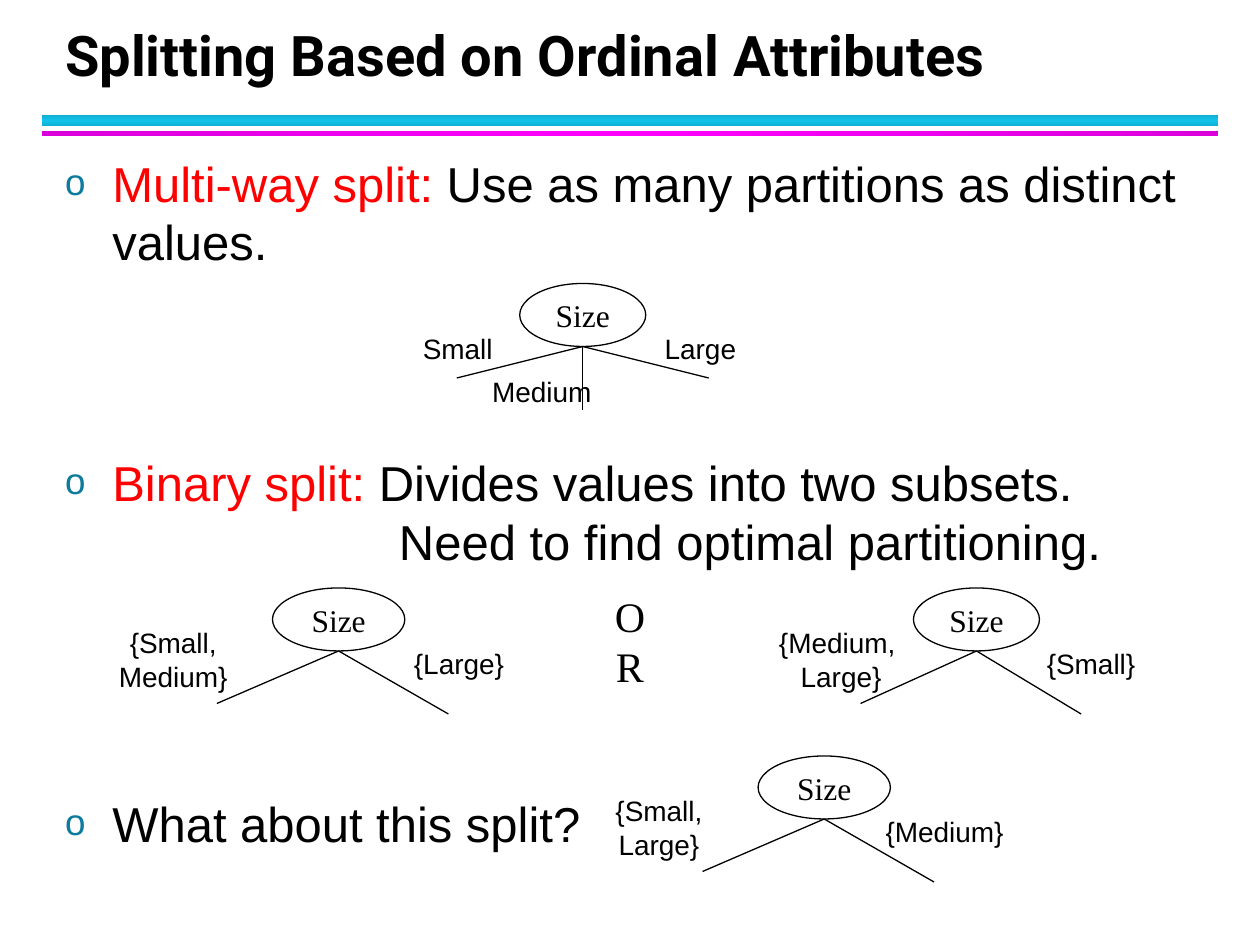
from copy import deepcopy

from pptx import Presentation
from pptx.dml.color import RGBColor
from pptx.enum.shapes import MSO_CONNECTOR, MSO_SHAPE
from pptx.enum.text import MSO_ANCHOR, MSO_AUTO_SIZE, PP_ALIGN
from pptx.oxml.ns import qn
from pptx.util import Inches, Pt
from lxml.etree import SubElement

COLS = 120
BLACK, RED, WHITE = "000000", "FF0000", "FFFFFF"


def rgb(value):
    return RGBColor.from_string(value)


class Deck:
    """Style and current slide; lengths are cells of a grid 120 columns wide."""
    sans, serif, heading = "Arial", "Times New Roman", "Roboto"
    bullet_color = "0C7B9C"

    def __init__(self):
        self.prs = Presentation()
        self.prs.slide_width, self.prs.slide_height = Inches(10), Inches(7.5)
        self.s = self.prs.slides.add_slide(self.prs.slide_layouts[1])

    def cells(self, *values):
        return [round(v * self.prs.slide_width / COLS) for v in values]

    def font(self, r, name, size, color=BLACK, bold=False):
        f = r.font
        f.name, f.size, f.bold = name, Pt(size), bold
        f.color.rgb = rgb(color)

    def place(self, sp, *box):
        sp.left, sp.top, sp.width, sp.height = self.cells(*box)

    def title(self, text, *box):
        sp = self.s.shapes.title
        self.place(sp, *box)
        tf = sp.text_frame
        tf.text = text
        tf.auto_size = MSO_AUTO_SIZE.NONE
        tf.vertical_anchor = MSO_ANCHOR.BOTTOM
        p = tf.paragraphs[0]
        p.alignment, p.line_spacing = PP_ALIGN.LEFT, Pt(36)
        self.font(p.runs[0], self.heading, 32, bold=True)

    def body(self, items, *box):
        """Each item is (space before, left margin, bulleted, runs)."""
        sp = self.s.placeholders[1]
        self.place(sp, *box)
        tf = sp.text_frame
        tf.auto_size = MSO_AUTO_SIZE.NONE
        for i, (before, margin, bulleted, runs) in enumerate(items):
            p = tf.add_paragraph() if i else tf.paragraphs[0]
            p.line_spacing = Pt(33.5)
            p.space_before, p.space_after = Pt(before), Pt(0)
            for text, color in runs:
                r = p.add_run()
                r.text = text
                self.font(r, self.sans, 28, color)
            self.bullet(p, margin, bulleted)

    def bullet(self, p, margin, shown):
        pPr = p._p.get_or_add_pPr()
        pPr.set("marL", str(self.cells(margin)[0]))
        pPr.set("indent", str(self.cells(-margin)[0] if shown else 0))
        if not shown:
            SubElement(pPr, qn("a:buNone"))
            return
        color = SubElement(pPr, qn("a:buClr"))
        SubElement(color, qn("a:srgbClr"), val=self.bullet_color)
        SubElement(pPr, qn("a:buSzPct"), val="75000")
        SubElement(pPr, qn("a:buFont"), typeface=self.sans)
        SubElement(pPr, qn("a:buChar"), char="o")

    def bar(self, edge, middle, angle, *box):
        sp = self.s.shapes.add_shape(MSO_SHAPE.RECTANGLE, *self.cells(*box))
        sp.shadow.inherit = False
        sp.line.fill.background()
        sp.fill.gradient()
        sp.fill.gradient_angle = angle
        stops = sp.element.spPr.find(".//" + qn("a:gsLst"))
        stops.append(deepcopy(stops[0]))
        for i, (stop, color) in enumerate(zip(sp.fill.gradient_stops, (edge, middle, edge))):
            stop.position = i / 2
            stop.color.rgb = rgb(color)

    def centered(self, sp, text, name, size, wrap=False):
        tf = sp.text_frame
        tf.word_wrap = wrap
        tf.vertical_anchor = MSO_ANCHOR.MIDDLE
        p = tf.paragraphs[0]
        p.text = text
        p.alignment = PP_ALIGN.CENTER
        for r in p.runs:
            self.font(r, name, size)

    def label(self, text, cx, cy, w, h, name=sans, size=16):
        """Text box around its centre; it wraps when it holds several words."""
        sp = self.s.shapes.add_textbox(*self.cells(cx - w / 2, cy - h / 2, w, h))
        self.centered(sp, text, name, size, wrap=" " in text)

    def line(self, x1, y1, x2, y2):
        c = self.s.shapes.add_connector(MSO_CONNECTOR.STRAIGHT, *self.cells(x1, y1, x2, y2))
        c.line.color.rgb, c.line.width = rgb(BLACK), Pt(0.75)
        SubElement(c.element.spPr, qn("a:effectLst"))

    def tree(self, x, y, w, ends, labels):
        """Root ellipse with its foot at (x, y); ends and labels are offsets."""
        sp = self.s.shapes.add_shape(MSO_SHAPE.OVAL, *self.cells(x - w / 2, y - 6, w, 6))
        sp.shadow.inherit = False
        sp.fill.solid()
        sp.fill.fore_color.rgb = rgb(WHITE)
        sp.line.color.rgb, sp.line.width = rgb(BLACK), Pt(0.75)
        self.centered(sp, "Size", self.serif, 18)
        for dx, dy in ends:
            self.line(x, y, x + dx, y + dy)
        for text, dx, dy, lw, lh in labels:
            self.label(text, x + dx, y + dy, lw, lh)

    def binary_tree(self, x, y, w, left, right, left_dx, left_w, right_w):
        self.tree(x, y, w, [(-0.92 * w, 5), (0.83 * w, 6)],
                  [(left, left_dx, 0.8, left_w, 7.7),
                   (right, 0.91 * w, 1.2, right_w, 4.4)])


def main():
    d = Deck()
    d.bar("10B0D3", "12C2E9", 90, 4, 11, 112, 1)
    d.bar("DA00DA", "FF00FF", 0, 4, 12.5, 112, 0.5)
    d.title("Splitting Based on Ordinal Attributes", 5, 2, 108.7, 7)
    d.body([
        (1, 4.5, True, [("Multi-way split:", RED),
                        (" Use as many partitions as distinct values.", BLACK)]),
        (104, 4.5, True, [("Binary split:", RED),
                          (" Divides values into two subsets.", BLACK)]),
        (0, 31.8, False, [("Need to find optimal partitioning.", BLACK)]),
        (128, 4.5, True, [("What about this split?", BLACK)]),
    ], 5, 14, 110, 69)

    d.tree(55.5, 33, 12, [(-12, 3), (0, 6), (12, 3)],
           [("Small", -11.9, 0.2, 9.1, 4.4),
            ("Medium", -3.9, 4.3, 11.9, 4.4),
            ("Large", 11.2, 0.2, 9.2, 4.4)])
    d.binary_tree(93, 62, 12, "{Medium, \nLarge}", "{Small}", -12.9, 14.3, 10.8)
    d.binary_tree(32.25, 62, 12.6, "{Small, Medium}", "{Large}", -15.75, 13.1, 11)
    d.label("OR", 60, 61, 7.9, 6, d.serif, 24)
    d.binary_tree(78.5, 78, 12.6, "{Small, Large}", "{Medium}", -15.75, 13.1, 13.7)
    d.prs.save("out.pptx")


if __name__ == "__main__":
    main()
